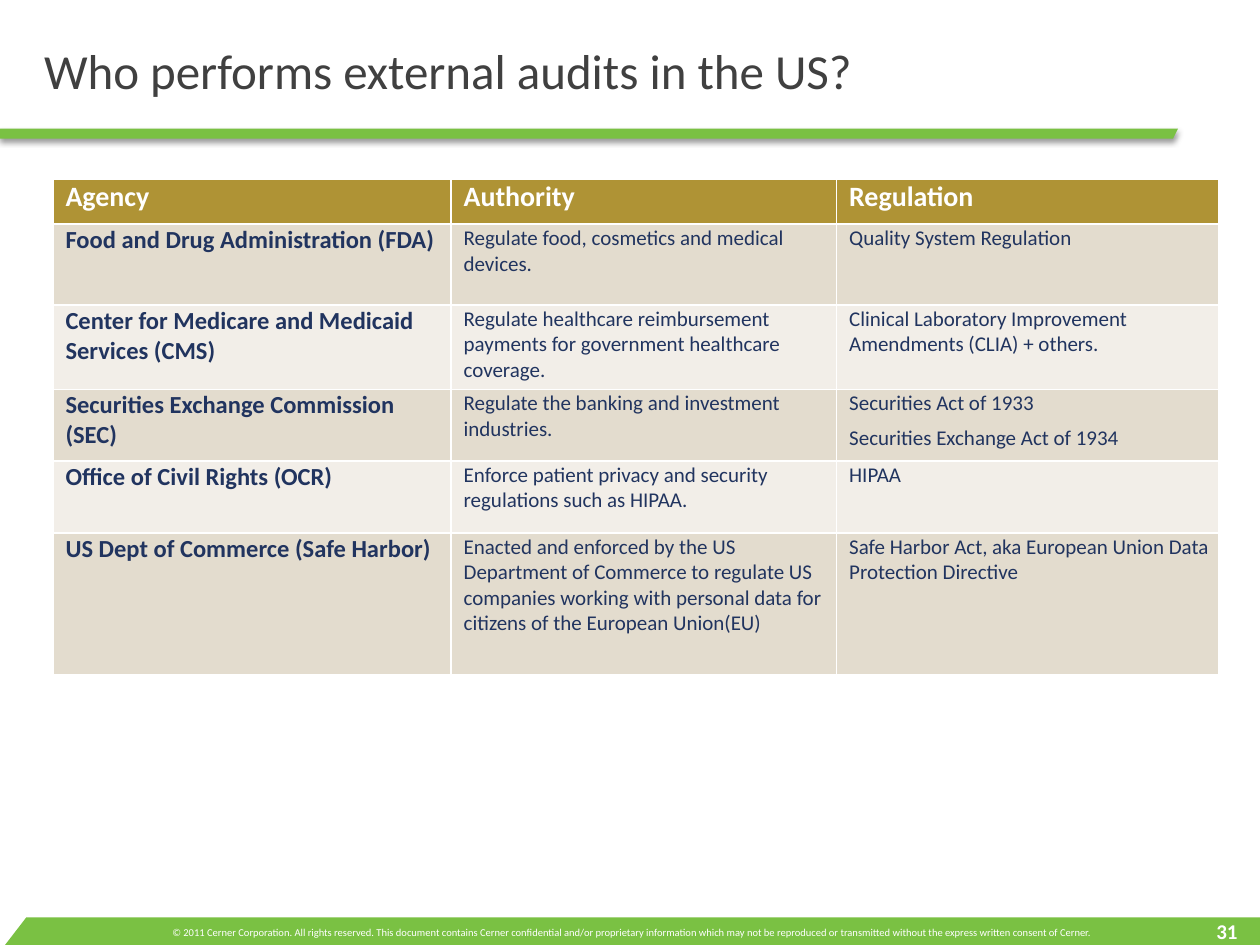
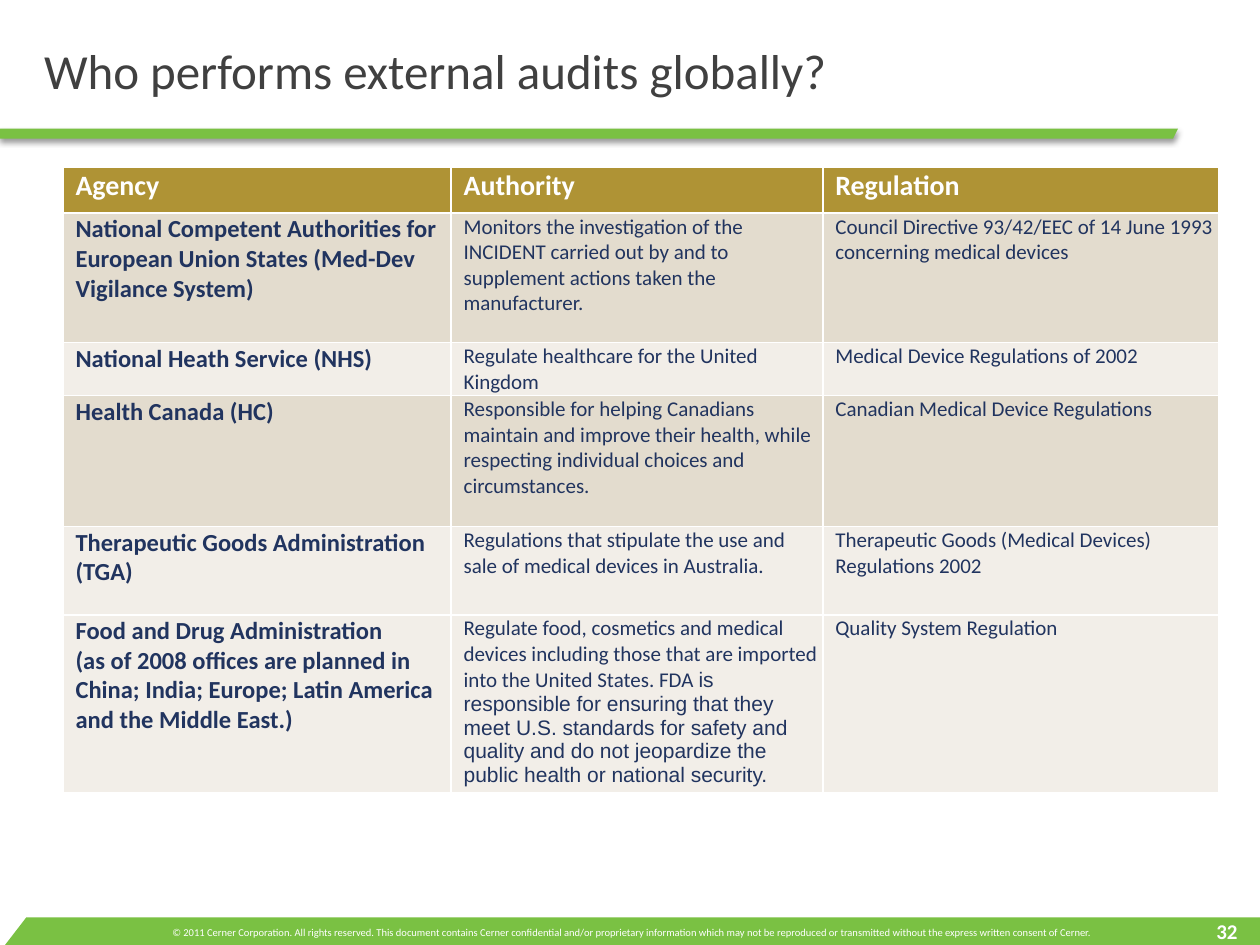
from dataclasses import dataclass

from lxml import etree
from pptx import Presentation
from pptx.dml.color import RGBColor
from pptx.enum.text import MSO_ANCHOR, MSO_AUTO_SIZE, PP_ALIGN
from pptx.oxml.ns import qn
from pptx.util import Inches, Pt

LEFT, CENTER, RIGHT = PP_ALIGN.LEFT, PP_ALIGN.CENTER, PP_ALIGN.RIGHT
MIDDLE = MSO_ANCHOR.MIDDLE
NO_AUTOFIT = MSO_AUTO_SIZE.NONE
TITLE_ONLY = 5
FIRST_PAGE = 31


@dataclass(frozen=True)
class Theme:
    font: str = "Calibri"
    alt_font: str = "Arial"
    green: str = "7AC143"
    white: str = "FFFFFF"
    title: str = "404040"
    navy: str = "21345F"
    gold: str = "AF9335"
    dark_band: str = "E3DCCE"
    light_band: str = "F2EEE8"
    title_size: float = 28
    header_size: float = 16
    agency_size: float = 14
    body_size: float = 12
    page_size: float = 12
    legal_size: float = 6


THEME = Theme()
BANDS = {"D": THEME.dark_band, "L": THEME.light_band}
HEADER = ("Agency", "Authority", "Regulation")
COPYRIGHT = (
    "© 2011 Cerner Corporation. All rights reserved. This document contains Cerner "
    "confidential and/or proprietary information which may not be reproduced or "
    "transmitted without the express written consent of Cerner."
)

# A cell is a string, or a list of (font, text) runs.
US_AUDITS = dict(
    title="Who performs external audits in the US?",
    box=(0.42, 1.42),
    col_widths=(3.16, 3.06, 3.03),
    row_heights=(0.36, 0.64, 0.67, 0.28, 0.29, 0.57, 1.13),
    bands="DLDDLD",
    merged_rows=(3, 4),
    rows=[
        ("Food and Drug Administration (FDA)",
         "Regulate food, cosmetics and medical devices.",
         "Quality System Regulation"),
        ("Center for Medicare and Medicaid Services (CMS)",
         "Regulate healthcare reimbursement payments for government healthcare coverage.",
         "Clinical Laboratory Improvement Amendments (CLIA) + others."),
        ("Securities Exchange Commission (SEC)",
         "Regulate the banking and investment industries.",
         "Securities Act of 1933"),
        ("", "", "Securities Exchange Act of 1934"),
        ("Office of Civil Rights (OCR)",
         "Enforce patient privacy and security regulations such as HIPAA.",
         "HIPAA"),
        ("US Dept of Commerce (Safe Harbor)",
         "Enacted and enforced by the US Department of Commerce to regulate US companies "
         "working with personal data for citizens of the European Union(EU)",
         "Safe Harbor Act, aka European Union Data Protection Directive"),
    ],
)

GLOBAL_AUDITS = dict(
    title="Who performs external audits globally?",
    box=(0.5, 1.33),
    col_widths=(3.08, 2.95, 3.14),
    row_heights=(0.36, 1.03, 0.42, 1.04, 0.7, 1.37),
    bands="DLDLL",
    rows=[
        ("National Competent Authorities for European Union States "
         "(Med-Dev Vigilance System)",
         "Monitors the investigation of the INCIDENT carried out by and to supplement "
         "actions taken the manufacturer.",
         "Council Directive 93/42/EEC of 14 June 1993 concerning medical devices"),
        ("National Heath Service (NHS)",
         "Regulate healthcare for the United Kingdom",
         "Medical Device Regulations of 2002"),
        ("Health Canada (HC)",
         "Responsible for helping Canadians maintain and improve their health, while "
         "respecting individual choices and circumstances.",
         "Canadian Medical Device Regulations"),
        ("Therapeutic Goods Administration (TGA)",
         "Regulations that stipulate the use and sale of medical devices in Australia.",
         "Therapeutic Goods (Medical Devices) Regulations 2002"),
        ("Food and Drug Administration\n(as of 2008 offices are planned in China; India; "
         "Europe; Latin America and the Middle East.)",
         [(THEME.font, "Regulate food, cosmetics and medical devices including those that "
                       "are imported into the United States. FDA "),
          (THEME.alt_font, "is responsible for ensuring that they meet U.S. standards for "
                           "safety and quality and do not jeopardize the public health or "
                           "national security.")],
         "Quality System Regulation"),
    ],
)


def rgb(color):
    return RGBColor.from_string(color)


def write(tf, text, *, size, color, bold=False, align=LEFT):
    """Fill a text frame; each line of a string becomes a paragraph."""
    lines = text.split("\n") if isinstance(text, str) else [text]
    for i, line in enumerate(lines):
        p = tf.add_paragraph() if i else tf.paragraphs[0]
        p.alignment = align
        runs = [(THEME.font, line)] if isinstance(line, str) else line
        for font, part in runs:
            r = p.add_run()
            r.text = part
            r.font.name, r.font.size, r.font.bold = font, Pt(size), bold
            r.font.color.rgb = rgb(color)


def place(sp, left, top, width, height):
    sp.left, sp.top = Inches(left), Inches(top)
    sp.width, sp.height = Inches(width), Inches(height)


def add_band(slide, points):
    """Draw a green outline through points given in inches."""
    start, *rest = [(Inches(x), Inches(y)) for x, y in points]
    builder = slide.shapes.build_freeform(*start)
    builder.add_line_segments(rest, close=True)
    sp = builder.convert_to_shape()
    sp.fill.solid()
    sp.fill.fore_color.rgb = rgb(THEME.green)
    sp.line.fill.background()
    sp.shadow.inherit = False
    return sp


def add_drop_shadow(sp):
    effects = sp.element.spPr.find(qn("a:effectLst"))
    shadow = etree.SubElement(
        effects, qn("a:outerShdw"), blurRad=str(Pt(3)), dist=str(Pt(2)),
        dir="5400000", algn="t", rotWithShape="0")
    color = etree.SubElement(shadow, qn("a:srgbClr"), val="000000")
    etree.SubElement(color, qn("a:alpha"), val="40000")


def add_label(slide, box, text, **fmt):
    sp = slide.shapes.add_textbox(*map(Inches, box))
    sp.text_frame.word_wrap = True
    write(sp.text_frame, text, **fmt)


def add_title(slide, text):
    sp = slide.shapes.title
    place(sp, 0.25, 0.22, 9.1, 0.67)
    tf = sp.text_frame
    tf.auto_size = NO_AUTOFIT
    tf.vertical_anchor = MIDDLE
    write(tf, text, size=THEME.title_size, color=THEME.title)
    rule = add_band(slide, [(0, 1.02), (9.35, 1.02), (9.31, 1.1), (0, 1.1)])
    add_drop_shadow(rule)


def add_footer(slide, page):
    add_band(slide, [(0.21, 7.28), (10, 7.28), (10, 7.5), (0.04, 7.5)])
    add_label(slide, (0.22, 7.3, 9.58, 0.2), COPYRIGHT,
              size=THEME.legal_size, color=THEME.white, align=CENTER)
    add_label(slide, (9.34, 7.24, 0.58, 0.25), str(page),
              size=THEME.page_size, color=THEME.white, bold=True, align=RIGHT)


def set_borders(cell, widths):
    """Draw white cell borders; widths maps a side (L, R, T, B) to points, 0 for none."""
    tc_pr = cell._tc.get_or_add_tcPr()
    for i, side in enumerate("LRTB"):
        ln = etree.Element(qn(f"a:ln{side}"), w=str(Pt(widths[side])))
        if widths[side]:
            fill = etree.SubElement(ln, qn("a:solidFill"))
            etree.SubElement(fill, qn("a:srgbClr"), val=THEME.white)
        else:
            etree.SubElement(ln, qn("a:noFill"))
        tc_pr.insert(i, ln)


def format_cell(cell, fill, borders):
    cell.margin_left = Inches(0.1)
    cell.margin_right = cell.margin_top = Inches(0.01)
    cell.margin_bottom = 0
    cell.fill.solid()
    cell.fill.fore_color.rgb = rgb(fill)
    set_borders(cell, borders)


def cell_style(row, col):
    if row == 0:
        return dict(size=THEME.header_size, color=THEME.white, bold=True)
    if col == 0:
        return dict(size=THEME.agency_size, color=THEME.navy, bold=True)
    return dict(size=THEME.body_size, color=THEME.navy)


def add_audit_table(slide, box, col_widths, row_heights, bands, rows, merged_rows=None):
    """Add the agency table; merged_rows names two rows that form one entry."""
    size = sum(col_widths), sum(row_heights)
    table = slide.shapes.add_table(
        len(row_heights), len(col_widths), *map(Inches, (*box, *size))).table
    table.horz_banding = False
    for column, width in zip(table.columns, col_widths):
        column.width = Inches(width)
    for row, height in zip(table.rows, row_heights):
        row.height = Inches(height)

    fills = [THEME.gold] + [BANDS[band] for band in bands]
    first, last = merged_rows or (None, None)
    for i, texts in enumerate([HEADER, *rows]):
        borders = dict(L=1, R=1, T=1.5 if i == 1 else 1, B=1.5 if i == 0 else 1)
        for j, text in enumerate(texts):
            sides = dict(borders)
            if j == len(texts) - 1:
                if i == first:
                    sides["B"] = 0
                elif i == last:
                    sides["T"] = 0
            cell = table.cell(i, j)
            format_cell(cell, fills[i], sides)
            if text:
                write(cell.text_frame, text, **cell_style(i, j))
    if merged_rows:
        for j in range(len(col_widths) - 1):
            table.cell(first, j).merge(table.cell(last, j))


def add_audit_slide(prs, page, title, **table):
    slide = prs.slides.add_slide(prs.slide_layouts[TITLE_ONLY])
    add_footer(slide, page)
    add_title(slide, title)
    add_audit_table(slide, **table)


def main():
    prs = Presentation()
    prs.slide_width, prs.slide_height = Inches(10), Inches(7.5)
    for page, content in enumerate((US_AUDITS, GLOBAL_AUDITS), start=FIRST_PAGE):
        add_audit_slide(prs, page, **content)
    prs.save("out.pptx")


if __name__ == "__main__":
    main()
